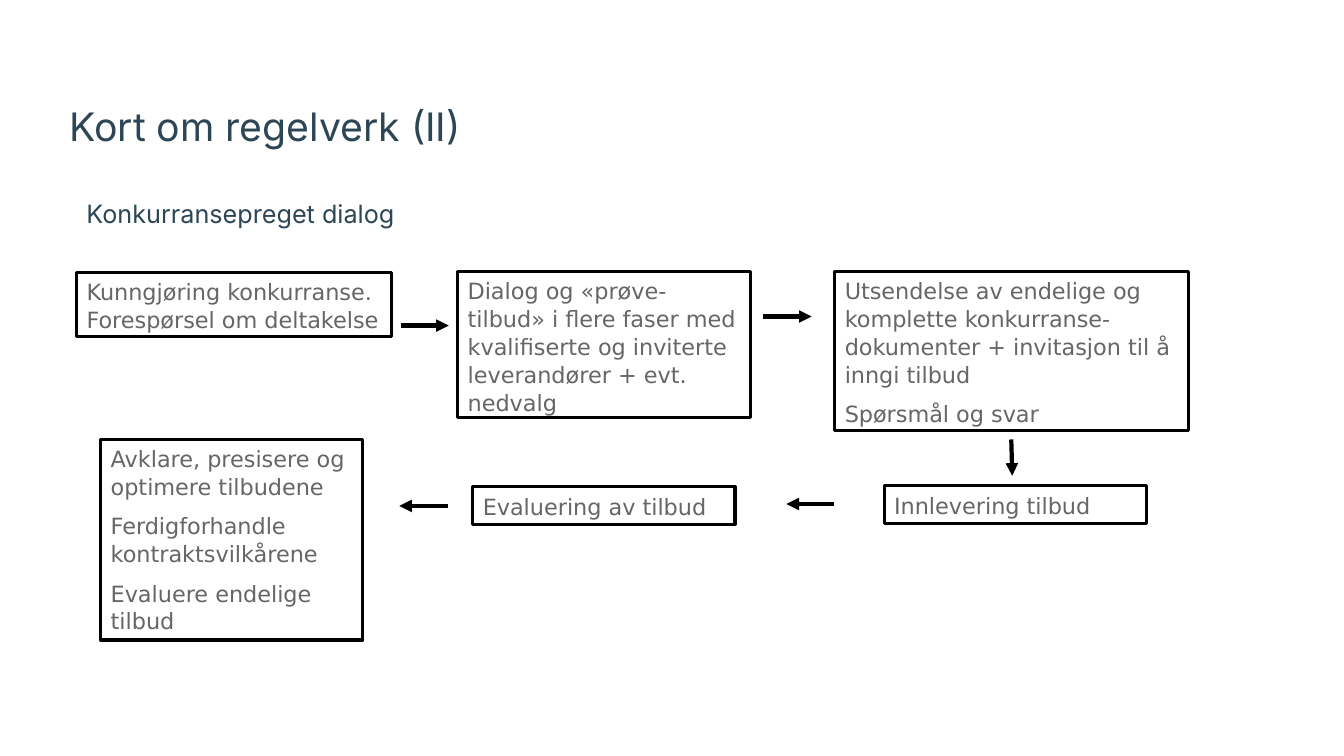
"""Build a slide showing the steps of a competitive dialogue as a flow chart."""
import pptx
import pptx.util
import pptx.dml.color
import pptx.enum.shapes
import pptx.enum.text
import pptx.oxml
import pptx.oxml.ns
from pptx.util import Inches

RGBColor = pptx.dml.color.RGBColor
NAVY = RGBColor(0x2C, 0x46, 0x56)
GREY = RGBColor(0x66, 0x66, 0x66)
BLACK = RGBColor(0, 0, 0)

TITLE = "Kort om regelverk (II)"
SUBTITLE = "Konkurransepreget dialog"
STEPS = [
    ((0.76, 2.7, 3.12, 0.64), ["Kunngjøring konkurranse.\nForespørsel om deltakelse"]),
    ((4.54, 2.69, 2.9, 1.45),
     ["Dialog og «prøve-tilbud» i flere faser med kvalifiserte og inviterte "
      "leverandører + evt. nedvalg"]),
    ((8.28, 2.69, 3.51, 1.58),
     ["Utsendelse av endelige og komplette konkurranse-dokumenter + invitasjon "
      "til å inngi tilbud", "Spørsmål og svar"]),
    ((8.77, 4.82, 2.6, 0.37), ["Innlevering tilbud"]),
    ((4.69, 4.83, 2.6, 0.37), ["Evaluering av tilbud"]),
    ((1, 4.36, 2.6, 1.99),
     ["Avklare, presisere og optimere tilbudene",
      "Ferdigforhandle kontraktsvilkårene", "Evaluere endelige tilbud"]),
]
ARROWS = [
    (3.98, 3.23, 4.45, 3.23),
    (7.57, 3.14, 8.05, 3.14),
    (10.03, 4.36, 10.04, 4.72),
    (8.27, 5, 7.8, 5),
    (4.44, 5.02, 3.96, 5.02),
]


def write_text(shape, texts, font_name, size, color, line_spacing):
    frame = shape.text_frame
    frame.word_wrap = True
    frame.auto_size = pptx.enum.text.MSO_AUTO_SIZE.NONE
    frame.vertical_anchor = pptx.enum.text.MSO_ANCHOR.TOP
    for index, text in enumerate(texts):
        paragraph = frame.add_paragraph() if index else frame.paragraphs[0]
        paragraph.alignment = pptx.enum.text.PP_ALIGN.LEFT
        paragraph.line_spacing = line_spacing
        paragraph.space_before = pptx.util.Pt(8 if index else 0)
        for line_index, line in enumerate(text.split("\n")):
            if line_index:
                paragraph.add_line_break()
            run = paragraph.add_run()
            run.text = line
            run.font.name = font_name
            run.font.size = pptx.util.Pt(size)
            run.font.color.rgb = color


def add_step(slide, box, texts):
    shape = slide.shapes.add_shape(
        pptx.enum.shapes.MSO_SHAPE.RECTANGLE, *map(Inches, box))
    shape.shadow.inherit = False
    shape.fill.background()
    shape.line.color.rgb = BLACK
    shape.line.width = pptx.util.Pt(2.25)
    write_text(shape, texts, "DejaVu Sans", 16, GREY, 1.04)


def add_arrow(slide, ends):
    arrow = slide.shapes.add_connector(
        pptx.enum.shapes.MSO_CONNECTOR.STRAIGHT, *map(Inches, ends))
    arrow.line.color.rgb = BLACK
    arrow.line.width = pptx.util.Pt(3)
    head = pptx.oxml.parse_xml(
        f'<a:tailEnd {pptx.oxml.ns.nsdecls("a")} type="triangle"/>')
    arrow.line._get_or_add_ln().append(head)
    arrow._element.spPr.append(
        pptx.oxml.parse_xml(f'<a:effectLst {pptx.oxml.ns.nsdecls("a")}/>'))


def main():
    presentation = pptx.Presentation()
    presentation.slide_width = Inches(13.33)
    presentation.slide_height = Inches(7.5)
    slide = presentation.slides.add_slide(presentation.slide_layouts[5])

    title = slide.shapes.title
    title.left, title.top, title.width, title.height = map(
        Inches, (0.59, 0.95, 12.16, 0.78))
    write_text(title, [TITLE], "Inter", 28, NAVY, 1.04)

    subtitle = slide.shapes.add_textbox(*map(Inches, (0.76, 1.9, 11.5, 0.81)))
    write_text(subtitle, [SUBTITLE], "Inter", 18, NAVY, 1.07)

    for box, texts in STEPS:
        add_step(slide, box, texts)
    for ends in ARROWS:
        add_arrow(slide, ends)
    presentation.save("out.pptx")


if __name__ == "__main__":
    main()
